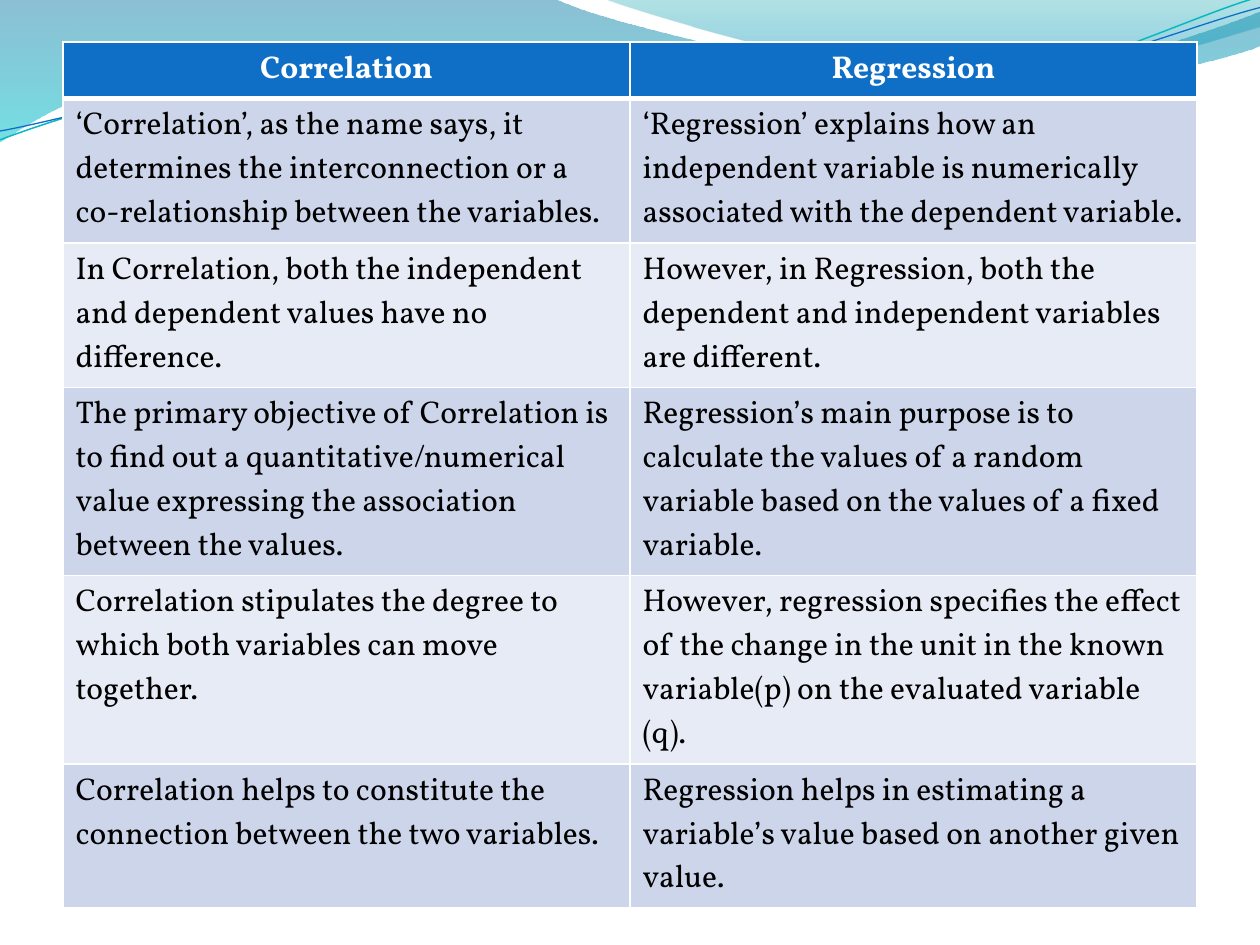
from lxml import etree
from pptx import Presentation
from pptx.dml.color import RGBColor
from pptx.enum import text
from pptx.oxml.ns import qn
from pptx.util import Inches, Pt

FONT = "Vollkorn"
COLORS = {
    "white": "FFFFFF", "black": "000000", "head": "0F6FC6",
    "odd": "CCD5EA", "even": "E7EBF5", "teal": "0AB8BF",
    "deep": "0074A1", "cyan": "00C6CF", "sea": "00A1A9", "sky": "008BBF",
}
BACK = [
    [(0, 0)], [(4.4, -0.01)],
    [(4.76, 0.17), (6.64, 0.63), (7.58, 0.63)],
    [(8.53, 0.63), (9.58, 0.26), (10, 0.09)], [(10.01, 0.36)],
    [(9.83, 0.44), (8.7, 0.76), (7.46, 0.75)],
    [(6.22, 0.75), (3.82, 0.28), (2.57, 0.34)],
    [(1.29, 0.36), (0.46, 0.83), (-0.01, 1.13)], [(0, 0)],
]
FRONT = [
    [(4.79, -0.01)], [(5.09, 0.11), (6.82, 0.62), (7.69, 0.65)],
    [(8.56, 0.69), (9.61, 0.32), (10, 0.21)], [(10, 0)], [(4.79, -0.01)],
]
UPPER = [
    [(0, 1.11)], [(0.48, 0.93), (1.58, 0.57), (2.77, 0.52)],
    [(3.95, 0.47), (5.93, 0.89), (7.13, 0.8)],
    [(8.33, 0.71), (9.38, 0.15), (9.98, -0.02)],
]
LOWER = [
    [(0, 1.04)], [(0.47, 0.96), (1.64, 0.61), (2.83, 0.56)],
    [(4.03, 0.51), (5.97, 0.84), (7.17, 0.75)],
    [(8.36, 0.67), (9.41, 0.21), (10, 0.06)],
]
ROWS = [
    ("Correlation", "Regression"),
    ("‘Correlation’, as the name says, it determines the interconnection or a co-relationship between the variables.",
     "‘Regression’ explains how an independent variable is numerically associated with the dependent variable."),
    ("In Correlation, both the independent and dependent values have no difference.",
     "However, in Regression, both the dependent and independent variables are different."),
    ("The primary objective of Correlation is to find out a quantitative/numerical value expressing the association between the values.",
     "Regression’s main purpose is to calculate the values of a random variable based on the values of a fixed variable."),
    ("Correlation stipulates the degree to which both variables can move together.",
     "However, regression specifies the effect of the change in the unit in the known variable(p) on the evaluated variable (q)."),
    ("Correlation helps to constitute the connection between the two variables.",
     "Regression helps in estimating a variable’s value based on another given value."),
]


def rgb(name):
    """Return the named colour."""
    return RGBColor.from_string(COLORS[name])


def bend(shape, parts):
    """Join each run of three line steps that forms a part into one cubic curve."""
    steps = iter(list(shape._element.iter(qn("a:lnTo"))))
    for part in parts[1:]:
        group = [next(steps) for point in part]
        if len(part) == 3:
            curve = etree.Element(qn("a:cubicBezTo"))
            group[0].addprevious(curve)
            for step in group:
                curve.append(step[0])
                step.getparent().remove(step)


def add_path(slide, left, top, parts, close):
    """Draw a freeform without shadow from parts relative to left and top."""
    points = [(left + Inches(x), top + Inches(y)) for part in parts for x, y in part]
    pen = slide.shapes.build_freeform(*points[0], scale=1.0)
    pen.add_line_segments(points[1:], close=close)
    shape = pen.convert_to_shape()
    shape.shadow.inherit = False
    bend(shape, parts)
    return shape


def add_wave(slide, left, top, parts, stops):
    """Draw a wave with a see-through gradient running downwards."""
    shape = add_path(slide, left, top, parts, True)
    shape.line.fill.background()
    shape.fill.gradient()
    shape.fill.gradient_angle = 270
    for stop, (place, name, alpha) in zip(shape.fill.gradient_stops, stops):
        stop.position = place
        stop.color.rgb = rgb(name)
    tints = shape._element.spPr.iter(qn("a:srgbClr"))
    for tint, (place, name, alpha) in zip(tints, stops):
        etree.SubElement(tint, qn("a:alpha"), val=str(alpha * 1000))


def add_curve(slide, left, top, parts, name, width):
    """Draw an open curved line."""
    shape = add_path(slide, left, top, parts, False)
    shape.fill.background()
    shape.line.color.rgb = rgb(name)
    shape.line.width = Pt(width)


def add_banner(slide, left, top):
    """Place the waves and curves across the head of the slide."""
    add_wave(slide, left, top, BACK, [(0, "deep", 45), (1, "cyan", 55)])
    add_wave(slide, left, top, FRONT, [(0, "sea", 30), (0.8, "sky", 45)])
    add_curve(slide, left, top, UPPER, "teal", 0.85)
    add_curve(slide, left, top, LOWER, "head", 0.75)


def set_edges(cell, row):
    """Give a cell white borders, thicker below the header."""
    widths = {"L": 1, "R": 1, "T": 3 if row == 1 else 1, "B": 3 if row == 0 else 1}
    props = cell._tc.get_or_add_tcPr()
    for spot, (side, width) in enumerate(widths.items()):
        edge = etree.Element(qn(f"a:ln{side}"), w=str(Pt(width)))
        fill = etree.SubElement(edge, qn("a:solidFill"))
        etree.SubElement(fill, qn("a:srgbClr"), val=COLORS["white"])
        props.insert(spot, edge)


def add_grid(slide, left, top, width, height):
    """Place the comparison table in the given box."""
    frame = slide.shapes.add_table(len(ROWS), 2, left, top, width, height)
    table = frame.table
    for row, words in enumerate(ROWS):
        head = row == 0
        table.rows[row].height = Inches(0.41)
        for col, word in enumerate(words):
            cell = table.cell(row, col)
            cell.fill.solid()
            cell.fill.fore_color.rgb = rgb("head" if head else "odd" if row % 2 else "even")
            set_edges(cell, row)
            para = cell.text_frame.paragraphs[0]
            para.alignment = text.PP_ALIGN.CENTER if head else text.PP_ALIGN.LEFT
            run = para.add_run()
            run.text = word
            run.font.name = FONT
            run.font.size = Pt(18)
            run.font.bold = head
            run.font.color.rgb = rgb("white" if head else "black")
    frame.height = height


def main():
    """Build and save the slide."""
    deck = Presentation()
    deck.slide_width, deck.slide_height = Inches(10), Inches(7.5)
    slide = deck.slides.add_slide(deck.slide_layouts[6])
    add_banner(slide, Inches(0), Inches(0))
    add_grid(slide, Inches(0.5), Inches(1 / 3), Inches(9), Inches(6.01))
    deck.save("out.pptx")


if __name__ == "__main__":
    main()
